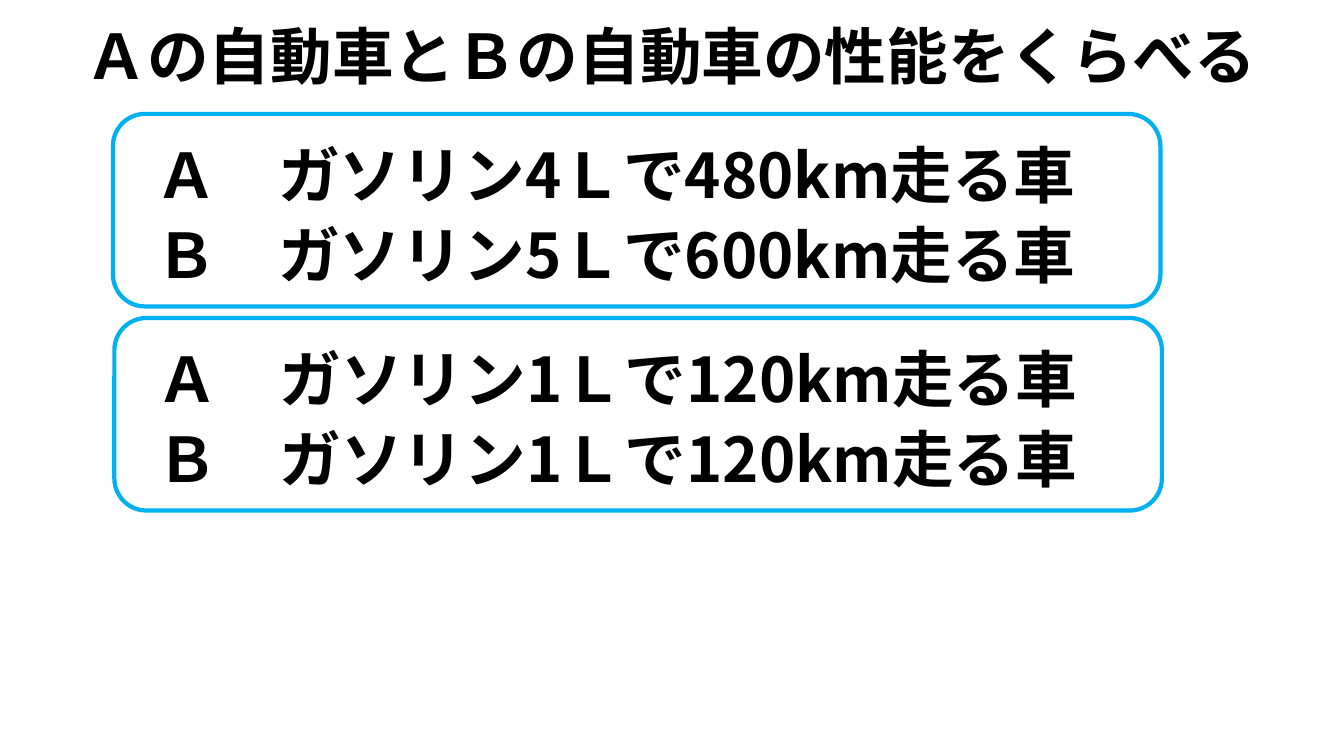
"""Build a slide comparing the fuel economy of cars A and B."""
from dataclasses import dataclass

from lxml.etree import SubElement
from pptx import Presentation
from pptx.dml.color import RGBColor
from pptx.enum.shapes import MSO_SHAPE
from pptx.enum.text import MSO_AUTO_SIZE
from pptx.oxml.ns import qn
from pptx.util import Inches, Pt


@dataclass(frozen=True)
class Theme:
    font: str = "Noto Sans CJK JP"
    size: Pt = Pt(44)
    text: RGBColor = RGBColor(0x00, 0x00, 0x00)
    frame: RGBColor = RGBColor(0x00, 0xB0, 0xF0)
    frame_width: Pt = Pt(3)


theme = Theme()
prs = Presentation()
prs.slide_width, prs.slide_height = Inches(13.33), Inches(7.5)
s = prs.slides.add_slide(prs.slide_layouts[6])
COL, ROW = prs.slide_width / 100, prs.slide_height / 100


def grid(col, row, cols, rows):
    return int(col * COL), int(row * ROW), int(cols * COL), int(rows * ROW)


def add_text(text, col, row, cols, rows=11.2, wrap=True):
    tf = s.shapes.add_textbox(*grid(col, row, cols, rows)).text_frame
    tf.word_wrap = wrap
    tf.auto_size = MSO_AUTO_SIZE.SHAPE_TO_FIT_TEXT
    r = tf.paragraphs[0].add_run()
    r.text = text
    r.font.name, r.font.size, r.font.bold = theme.font, theme.size, True
    r.font.color.rgb = theme.text
    SubElement(r.font._element, qn("a:ea"), typeface=theme.font)


add_text("Ａの自動車とＢの自動車の性能をくらべる", 5.63, 1.73, 89.5, wrap=False)

groups = [
    ["Ａ　ガソリン4Ｌで480km走る車", "Ｂ　ガソリン5Ｌで600km走る車"],
    ["Ａ　ガソリン1Ｌで120km走る車", "Ｂ　ガソリン1Ｌで120km走る車"],
]
for i, cars in enumerate(groups):
    shift, top = 0.11 * i, 15.07 + 27 * i
    for j, car in enumerate(cars):
        add_text(car, 10.8 + shift, top + 2.4 + 10.53 * j, 79.6)
    sp = s.shapes.add_shape(MSO_SHAPE.ROUNDED_RECTANGLE, *grid(8.4 + shift, top, 77.94, 25.47))
    sp.shadow.inherit = False
    sp.fill.background()
    sp.line.color.rgb = theme.frame
    sp.line.width = theme.frame_width

prs.save("out.pptx")
